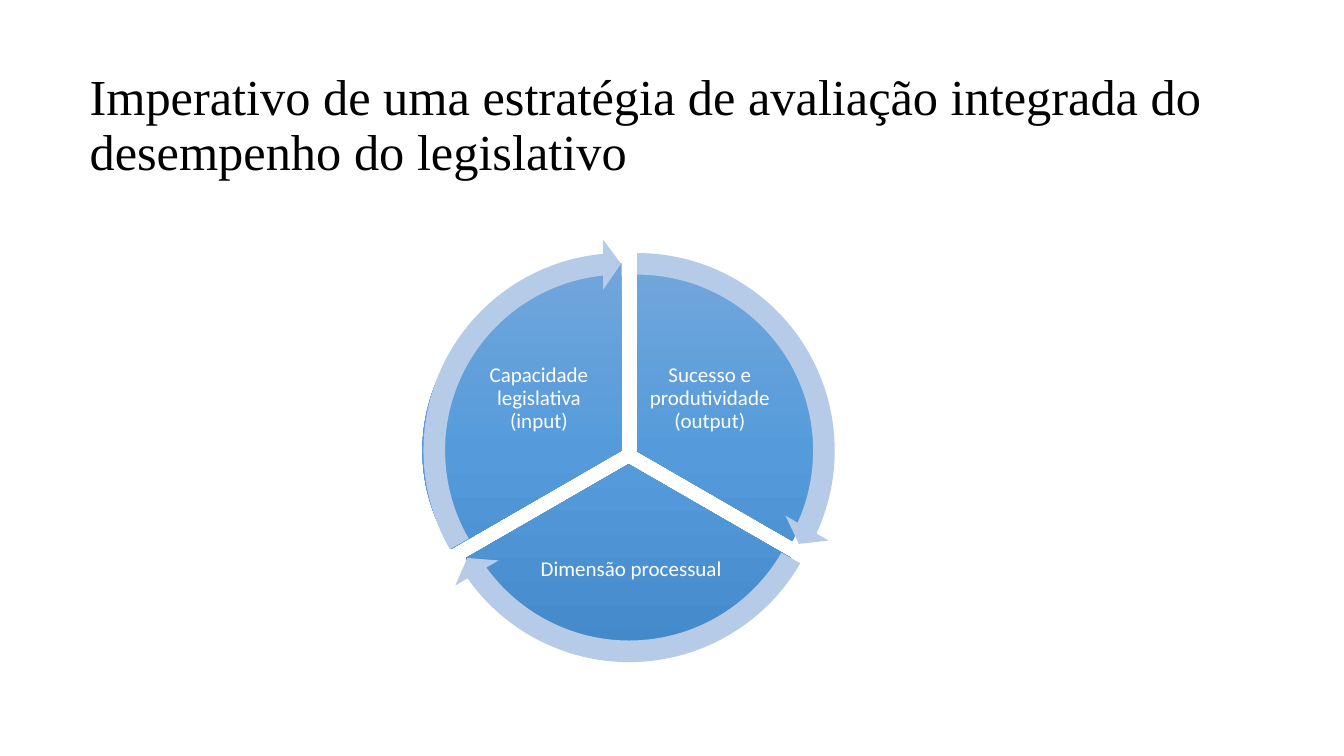
import copy

import pptx
import pptx.dml.color
import pptx.enum.shapes
import pptx.enum.text
import pptx.util

Inches = pptx.util.Inches
SHAPE = pptx.enum.shapes.MSO_SHAPE
ALIGN = pptx.enum.text.PP_ALIGN

TITLE = "Imperativo de uma estratégia de avaliação integrada do desempenho do legislativo"
TITLE_BOX = (0.79, 0.28, 11.98, 1.95)

# label, label box, sector box, arrow left and top; clockwise from the top
SECTORS = [
    ("Sucesso e produtividade (output)", (6.41, 3.41, 1.26, 1.09),
     (4.55, 2.64, 3.53, 3.67), (4.22, 2.37)),
    ("Dimensão processual", (5.26, 5.16, 2, 0.98),
     (4.37, 2.74, 3.73, 3.73), (4.14, 2.51)),
    ("Capacidade legislativa (input)", (4.64, 3.4, 1.41, 1.11),
     (4.19, 2.61, 3.95, 3.72), (4.06, 2.37)),
]
GRADIENT = [(0, "71A6DB"), (0.5, "559BDB"), (1, "448ACA")]
ARROW_COLOR = "B5CBE7"
ARROW_SIZE = 4.2
ARROW_BAND, ARROW_HEAD_WIDTH = 0.051, 0.059
ARROW_HEAD_ANGLE = 5.46
FIRST_ANGLE = 270
SWEEP = 360 / len(SECTORS)
ANGLE_UNIT = 0.6  # one degree in the units of shape.adjustments


def rgb(color):
    return pptx.dml.color.RGBColor.from_string(color)


def add_text(page, text, box, font, size, color, align, inset=None):
    frame = page.shapes.add_textbox(*map(Inches, box)).text_frame
    frame.word_wrap = True
    frame.vertical_anchor = pptx.enum.text.MSO_ANCHOR.MIDDLE
    if inset is not None:
        frame.margin_left = frame.margin_right = Inches(inset)
        frame.margin_top = frame.margin_bottom = Inches(inset)
    para = frame.paragraphs[0]
    para.alignment = align
    para.line_spacing = 0.9
    span = para.add_run()
    span.text = text
    span.font.name = font
    span.font.size = pptx.util.Pt(size)
    span.font.color.rgb = rgb(color)


def add_plain_shape(page, kind, box, adjustments):
    """Add a preset shape without line or shadow."""
    shape = page.shapes.add_shape(kind, *map(Inches, box))
    shape.shadow.inherit = False
    shape.line.fill.background()
    for index, value in enumerate(adjustments):
        shape.adjustments[index] = value
    return shape


def fill_gradient(shape):
    shape.fill.gradient()
    shape.fill.gradient_angle = 270
    stop_list = shape._element.spPr.find(".//" + pptx.oxml.ns.qn("a:gsLst"))
    stop_list.append(copy.deepcopy(stop_list[0]))
    for stop, (position, color) in zip(shape.fill.gradient_stops, GRADIENT):
        stop.position = position
        stop.color.rgb = rgb(color)


def main():
    deck = pptx.Presentation()
    deck.slide_width, deck.slide_height = Inches(13.33), Inches(7.5)
    page = deck.slides.add_slide(deck.slide_layouts[6])
    add_text(page, TITLE, TITLE_BOX, "Times New Roman", 36, "000000", ALIGN.LEFT)

    angles = []
    for index, (label, label_box, sector_box, _) in enumerate(SECTORS):
        start = (FIRST_ANGLE + index * SWEEP) % 360
        end = (start + SWEEP) % 360
        angles.append((start, end))
        sector = add_plain_shape(page, SHAPE.PIE, sector_box,
                                 [start * ANGLE_UNIT, end * ANGLE_UNIT])
        fill_gradient(sector)
        add_text(page, label, label_box, "Calibri", 15, "FFFFFF", ALIGN.CENTER, 0.02)

    for (start, end), (_, _, _, corner) in zip(angles, SECTORS):
        arrow = add_plain_shape(
            page, SHAPE.CIRCULAR_ARROW, (*corner, ARROW_SIZE, ARROW_SIZE),
            [ARROW_BAND, ARROW_HEAD_ANGLE * ANGLE_UNIT,
             (end - ARROW_HEAD_ANGLE) * ANGLE_UNIT, start * ANGLE_UNIT,
             ARROW_HEAD_WIDTH])
        arrow.fill.solid()
        arrow.fill.fore_color.rgb = rgb(ARROW_COLOR)

    deck.save("out.pptx")


if __name__ == "__main__":
    main()
